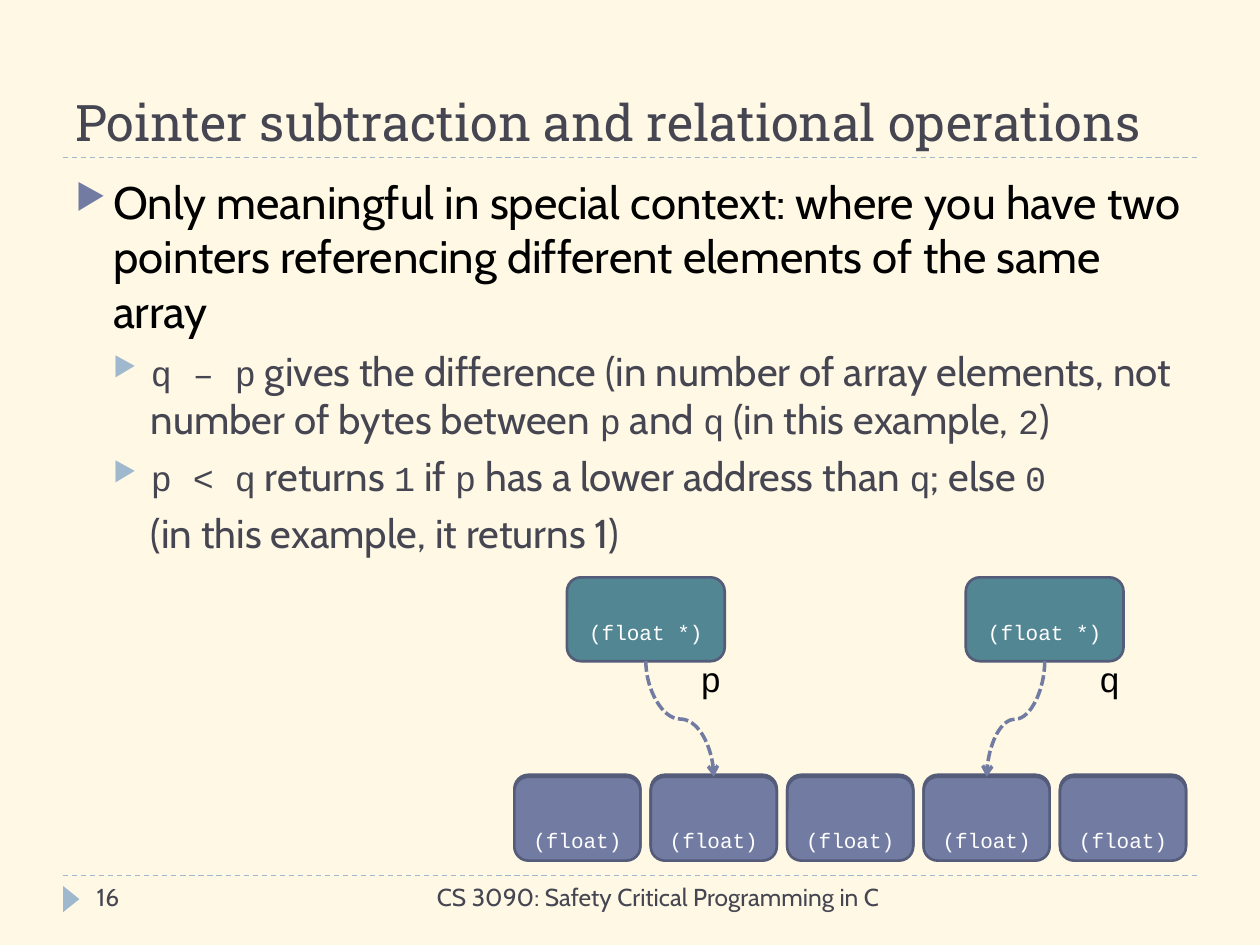
import lxml.etree
import pptx
import pptx.dml.color
import pptx.enum.dml
import pptx.enum.shapes
import pptx.enum.text
import pptx.oxml.ns
import pptx.util

Cm = pptx.util.Cm
Pt = pptx.util.Pt
qn = pptx.oxml.ns.qn
Align = pptx.enum.text.PP_ALIGN
Anchor = pptx.enum.text.MSO_ANCHOR
Shape = pptx.enum.shapes.MSO_SHAPE
Connector = pptx.enum.shapes.MSO_CONNECTOR
Dash = pptx.enum.dml.MSO_LINE

COLORS = {
    "background": "FEF8E4",
    "heading": "464653",
    "body": "000000",
    "accent": "727CA3",
    "light": "9FB8CD",
    "pointer": "528693",
    "outline": "545C79",
    "label": "FFFFFF",
}
BODY_FONT = "Cabin"
CODE_FONT = "Courier New"
TITLE_FONT = "Roboto Slab"

POINTS = [
    "`q – p` gives the difference (in number of array elements, not number of bytes "
    "between `p` and `q` (in this example, `2`)",
    "`p < q` returns `1` if `p` has a lower address than `q`; else `0`",
    "(in this example, it returns 1)",
]


def rgb(name):
    return pptx.dml.color.RGBColor.from_string(COLORS[name])


def add_run(paragraph, text, size=14, font=BODY_FONT, color="heading"):
    run = paragraph.add_run()
    run.text = text
    run.font.size = Pt(size)
    run.font.name = font
    run.font.color.rgb = rgb(color)


class SlideBuilder:
    """Hold the style and the current slide, and add each kind of element."""

    def __init__(self, presentation):
        self.slide = presentation.slides.add_slide(presentation.slide_layouts[6])
        self.slide.background.fill.solid()
        self.slide.background.fill.fore_color.rgb = rgb("background")

    def frame(self, left, top, width, height, wrap=True, anchor=Anchor.TOP):
        box = self.slide.shapes.add_textbox(Cm(left), Cm(top), Cm(width), Cm(height))
        box.text_frame.word_wrap = wrap
        box.text_frame.vertical_anchor = anchor
        return box.text_frame

    def text(self, text, *box, align=Align.LEFT, wrap=True, anchor=Anchor.TOP, **style):
        paragraph = self.frame(*box, wrap=wrap, anchor=anchor).paragraphs[0]
        paragraph.alignment = align
        add_run(paragraph, text, **style)

    def list_item(self, paragraph, text, level=0, size=23, color="heading", bullet=None):
        paragraph.level = level
        paragraph.space_before = Pt(6 - level)
        properties = paragraph._p.get_or_add_pPr()
        indent = Cm(0.76)
        properties.set("marL", str(indent * (level + 1)))
        properties.set("indent", str(-indent if bullet else 0))
        if bullet:
            bullet_color = lxml.etree.SubElement(properties, qn("a:buClr"))
            lxml.etree.SubElement(bullet_color, qn("a:srgbClr"), val=COLORS[bullet])
            lxml.etree.SubElement(properties, qn("a:buSzPct"), val="76000")
            lxml.etree.SubElement(properties, qn("a:buChar"), char="▶")
        for index, part in enumerate(text.split("`")):
            if part and index % 2:
                add_run(paragraph, part, size=20, font=CODE_FONT, color=color)
            elif part:
                add_run(paragraph, part, size=size, color=color)

    def shape(self, kind, left, top, width, height, fill, outline=None):
        shape = self.slide.shapes.add_shape(kind, Cm(left), Cm(top), Cm(width), Cm(height))
        shape.shadow.inherit = False
        shape.fill.solid()
        shape.fill.fore_color.rgb = rgb(fill)
        if outline:
            shape.line.color.rgb = rgb(outline)
            shape.line.width = Pt(1.5)
        else:
            shape.line.fill.background()
        return shape

    def memory_cell(self, text, left, top, width, fill, inset):
        cell = self.shape(Shape.ROUNDED_RECTANGLE, left, top, width, 1.69, fill, "outline")
        frame = cell.text_frame
        frame.word_wrap = True
        frame.margin_top = Cm(inset)
        frame.vertical_anchor = Anchor.MIDDLE
        frame.paragraphs[0].alignment = Align.CENTER
        add_run(frame.paragraphs[0], text, size=12, font=CODE_FONT, color="label")
        return cell

    def connector(self, kind, begin, end, color, width, dash):
        connector = self.slide.shapes.add_connector(kind, *begin, *end)
        connector.line.color.rgb = rgb(color)
        connector.line.width = Pt(width)
        connector.line.dash_style = dash
        lxml.etree.SubElement(connector.element.spPr, qn("a:effectLst"))
        return connector

    def divider(self, top):
        self.connector(Connector.STRAIGHT, (Cm(1.27), Cm(top)), (Cm(24.13), Cm(top)),
                       "light", 0.75, Dash.DASH)

    def curved_arrow(self, source, target):
        begin = source.left + source.width // 2, source.top + source.height
        end = target.left + target.width // 2, target.top
        arrow = self.connector(Connector.CURVE, begin, end, "accent", 2, Dash.SQUARE_DOT)
        arrow.begin_connect(source, 2)
        arrow.end_connect(target, 0)
        across, down = end[0] - begin[0], end[1] - begin[1]
        arrow.width, arrow.height = down, abs(across)
        arrow.left = (begin[0] + end[0] - down) // 2
        arrow.top = (begin[1] + end[1] - abs(across)) // 2
        transform = arrow.element.spPr.find(qn("a:xfrm"))
        transform.attrib.pop("flipH", None)
        transform.set("rot", "16200000" if across > 0 else "5400000")
        if across > 0:
            transform.set("flipH", "1")
        line = arrow.element.spPr.find(qn("a:ln"))
        lxml.etree.SubElement(line, qn("a:tailEnd"), type="arrow")


def main():
    presentation = pptx.Presentation()
    presentation.slide_width = Cm(25.4)
    presentation.slide_height = Cm(19.05)
    builder = SlideBuilder(presentation)

    for top in (17.65, 3.18):
        builder.divider(top)
    marker = builder.shape(Shape.ISOSCELES_TRIANGLE, 1.17, 17.96, 0.53, 0.33, "light")
    marker.rotation = 90
    builder.text("Pointer subtraction and relational operations", 1.27, 0.43, 22.86, 2.75,
                 anchor=Anchor.BOTTOM, size=28.8, font=TITLE_FONT)
    builder.text("CS 3090: Safety Critical Programming in C", 8.05, 17.65, 9.93, 1.02,
                 align=Align.RIGHT)
    builder.text("16", 1.7, 17.65, 5.51, 1.02)

    body = builder.frame(1.27, 3.38, 22.86, 13.72)
    builder.list_item(body.paragraphs[0],
                      "Only meaningful in special context: where you have two pointers "
                      "referencing different elements of the same array",
                      size=26, color="body", bullet="accent")
    for point in POINTS:
        bullet = "light" if "`" in point else None
        builder.list_item(body.add_paragraph(), point, level=1, bullet=bullet)

    for top in (15.62, 15.66):
        cells = [builder.memory_cell("(float)", 10.37 + 2.75 * column, top, 2.54, "accent", 0.98)
                 for column in range(5)]
    for name, left, target in (("p", 11.43, 1), ("q", 19.47, 3)):
        pointer = builder.memory_cell("(float *)", left, 11.64, 3.18, "pointer", 0.64)
        builder.text(name, left + 2.44, 13.13, 0.94, 1.12, wrap=False,
                     size=20, font=CODE_FONT, color="body")
        builder.curved_arrow(pointer, cells[target])

    presentation.save("out.pptx")


if __name__ == "__main__":
    main()
